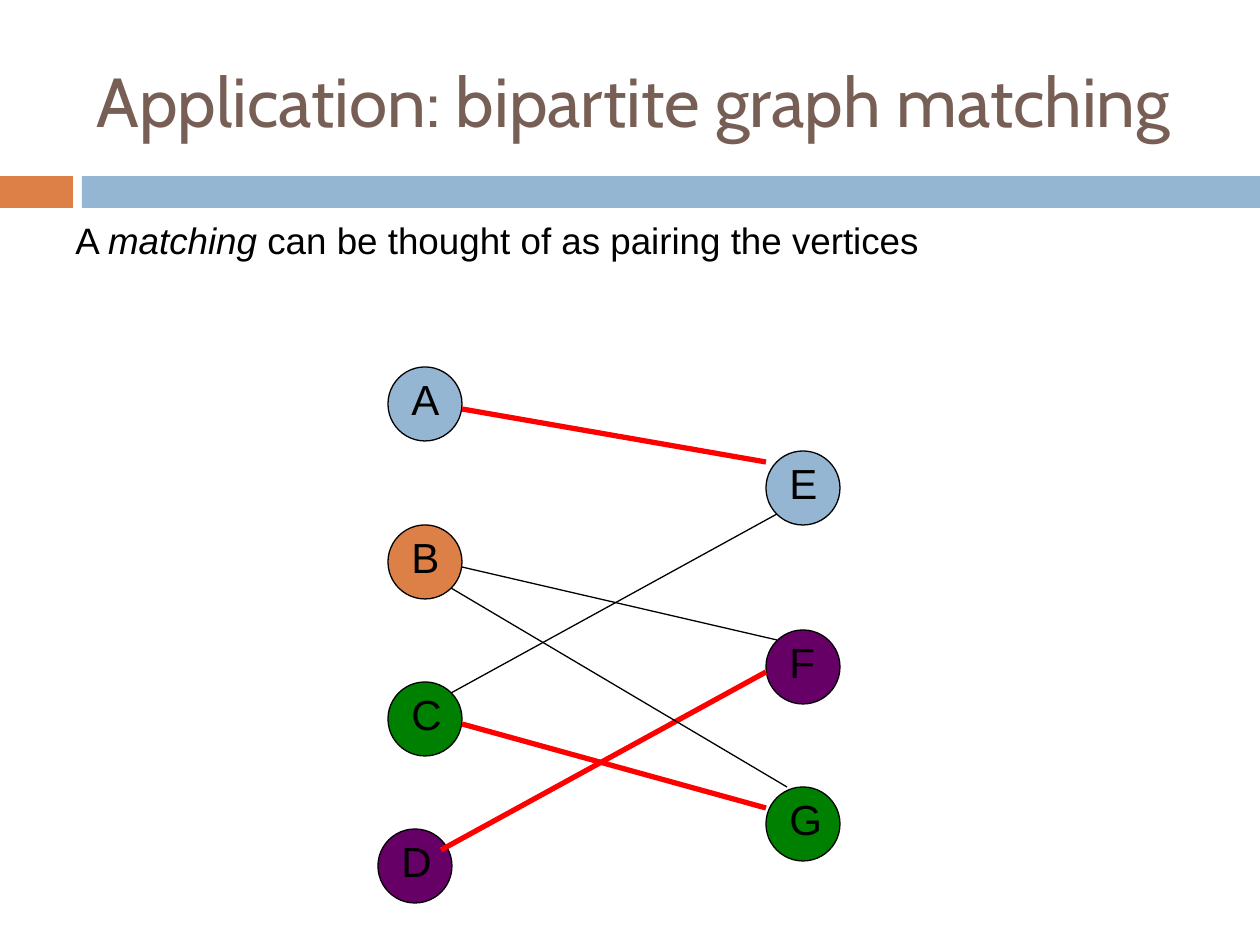
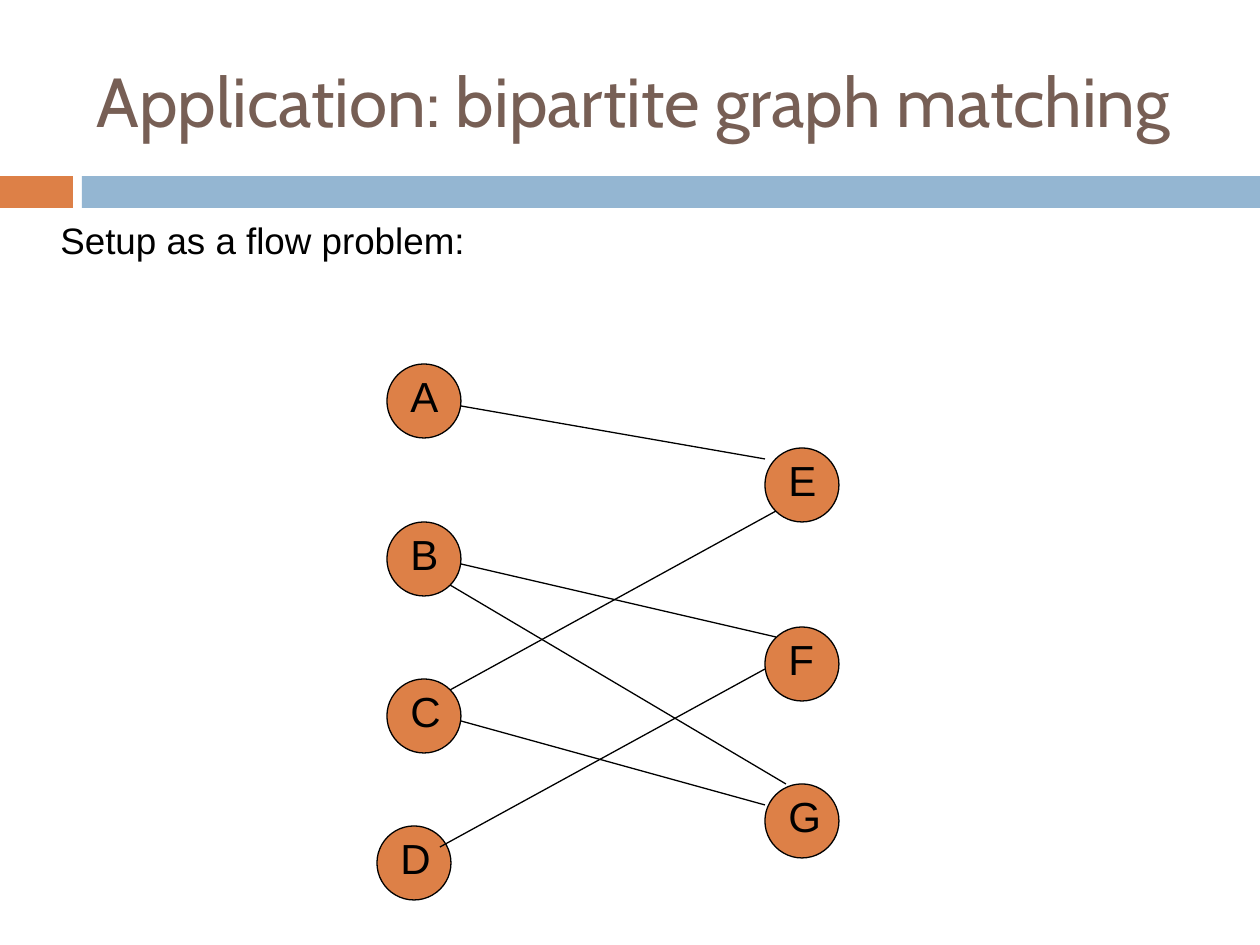
"""Build two slides on matching in a bipartite graph."""
from dataclasses import dataclass
from typing import NamedTuple

from lxml.etree import SubElement
from pptx import Presentation
from pptx.dml.color import RGBColor as Rgb
from pptx.enum.shapes import MSO_CONNECTOR as Link, MSO_SHAPE as Kind
from pptx.enum.text import MSO_ANCHOR as Anchor, MSO_AUTO_SIZE as Fit
from pptx.oxml.ns import qn
from pptx.shapes.autoshape import Shape
from pptx.shapes.shapetree import GroupShapes as Group
from pptx.slide import Slide
from pptx.util import Emu, Pt


@dataclass(frozen=True)
class Theme:
    """Colours, fonts and type sizes."""
    orange: str = "DD8047"
    blue: str = "94B6D2"
    green: str = "008000"
    purple: str = "660066"
    red: str = "FF0000"
    black: str = "000000"
    brown: str = "775F55"
    head_font: str = "Cabin"
    body_font: str = "Arial"
    head_size: float = 39.6
    body_size: float = 21
    node_size: float = 24
    thin: float = 0.75
    thick: float = 3


class Box(NamedTuple):
    """A place on the slide in px."""
    left: int
    top: int
    width: int
    height: int


class Node(NamedTuple):
    """A vertex of the graph and its colour on the matching slide."""
    name: str
    left: int
    top: int
    fill: str


class Edge(NamedTuple):
    """A line between two vertices."""
    x1: int
    y1: int
    x2: int
    y2: int
    paired: bool


class Phrase(NamedTuple):
    """A stretch of text, upright or slanted."""
    text: str
    slant: bool = False


class Page(NamedTuple):
    """What differs from slide to slide."""
    left: int
    words: tuple[Phrase, ...]
    dx: int
    dy: int
    matched: bool


THEME = Theme()
SCALE = 914400 / 126
WIDTH, HEIGHT = 1260, 945
NODE, LABEL, INSET = 74, 63, 11
TITLE = "Application: bipartite graph matching"
BANDS = (
    (Box(0, 176, 73, 32), THEME.orange),
    (Box(82, 176, WIDTH - 82, 32), THEME.blue),
)
NODES = (
    Node("A", 388, 367, THEME.blue),
    Node("B", 388, 525, THEME.orange),
    Node("C", 388, 682, THEME.green),
    Node("E", 766, 451, THEME.blue),
    Node("D", 378, 829, THEME.purple),
    Node("F", 766, 630, THEME.purple),
    Node("G", 766, 787, THEME.green),
)
EDGES = (
    Edge(441, 850, 766, 672, True),
    Edge(462, 724, 766, 808, True),
    Edge(451, 693, 777, 514, False),
    Edge(462, 567, 777, 640, False),
    Edge(462, 409, 766, 462, True),
    Edge(451, 588, 787, 787, False),
)
PAGES = (
    Page(63, (Phrase("A "), Phrase("matching ", True),
              Phrase("can be thought of as pairing the vertices")), 0, 0, True),
    Page(48, (Phrase("Setup as a flow problem:"),), -1, -3, False),
)


def px(size: int) -> Emu:
    """Turn px into EMU."""
    return Emu(round(size * SCALE))


def add_form(shapes: Group, kind: Kind, box: Box, fill: str, lined: bool) -> Shape:
    """Draw a filled shape with or without an outline."""
    form = shapes.add_shape(kind, *map(px, box))
    form.shadow.inherit = False
    form.fill.solid()
    form.fill.fore_color.rgb = Rgb.from_string(fill)
    if lined:
        form.line.color.rgb = Rgb.from_string(THEME.black)
        form.line.width = Pt(THEME.thin)
    else:
        form.line.fill.background()
    return form


def add_text(shapes: Group, box: Box, words: tuple[Phrase, ...], font: str,
             size: float, color: str) -> Shape:
    """Write one paragraph in a text box."""
    label = shapes.add_textbox(*map(px, box))
    label.text_frame.word_wrap = True
    line = label.text_frame.paragraphs[0]
    for phrase in words:
        run = line.add_run()
        run.text = phrase.text
        run.font.name = font
        run.font.size = Pt(size)
        run.font.italic = phrase.slant
        run.font.color.rgb = Rgb.from_string(color)
    return label


def add_node(slide: Slide, node: Node, page: Page) -> None:
    """Draw a vertex with its letter."""
    left, top = node.left + page.dx, node.top + page.dy
    shapes = slide.shapes.add_group_shape().shapes
    fill = node.fill if page.matched else THEME.orange
    add_form(shapes, Kind.OVAL, Box(left, top, NODE, NODE), fill, True)
    label = add_text(shapes, Box(left + INSET, top, LABEL, LABEL), (Phrase(node.name),),
                     THEME.body_font, THEME.node_size, THEME.black)
    label.text_frame.auto_size = Fit.SHAPE_TO_FIT_TEXT


def add_edge(slide: Slide, edge: Edge, page: Page) -> None:
    """Draw an edge, in bold red if it is in the matching."""
    bold = edge.paired and page.matched
    line = slide.shapes.add_connector(
        Link.STRAIGHT, px(edge.x1 + page.dx), px(edge.y1 + page.dy),
        px(edge.x2 + page.dx), px(edge.y2 + page.dy))
    line.line.color.rgb = Rgb.from_string(THEME.red if bold else THEME.black)
    line.line.width = Pt(THEME.thick if bold else THEME.thin)
    SubElement(line.element.spPr, qn("a:effectLst"))


def add_frame(slide: Slide) -> None:
    """Draw the bands and the title."""
    for box, fill in BANDS:
        add_form(slide.shapes, Kind.RECTANGLE, box, fill, False)
    title = add_text(slide.shapes, Box(84, 32, 1124, 136), (Phrase(TITLE),),
                     THEME.head_font, THEME.head_size, THEME.brown)
    title.text_frame.vertical_anchor = Anchor.MIDDLE


def add_page(slide: Slide, page: Page) -> None:
    """Fill one slide."""
    add_frame(slide)
    body = add_text(slide.shapes, Box(page.left, 217, 1134, 136), page.words,
                    THEME.body_font, THEME.body_size, THEME.black)
    line = body.text_frame.paragraphs[0]
    line.line_spacing = 0.9
    line.space_before = Pt(7)
    for node in NODES:
        add_node(slide, node, page)
    for edge in EDGES:
        add_edge(slide, edge, page)


def main() -> None:
    """Build and save the deck."""
    deck = Presentation()
    deck.slide_width, deck.slide_height = px(WIDTH), px(HEIGHT)
    for page in PAGES:
        add_page(deck.slides.add_slide(deck.slide_layouts[6]), page)
    deck.save("out.pptx")


if __name__ == "__main__":
    main()
